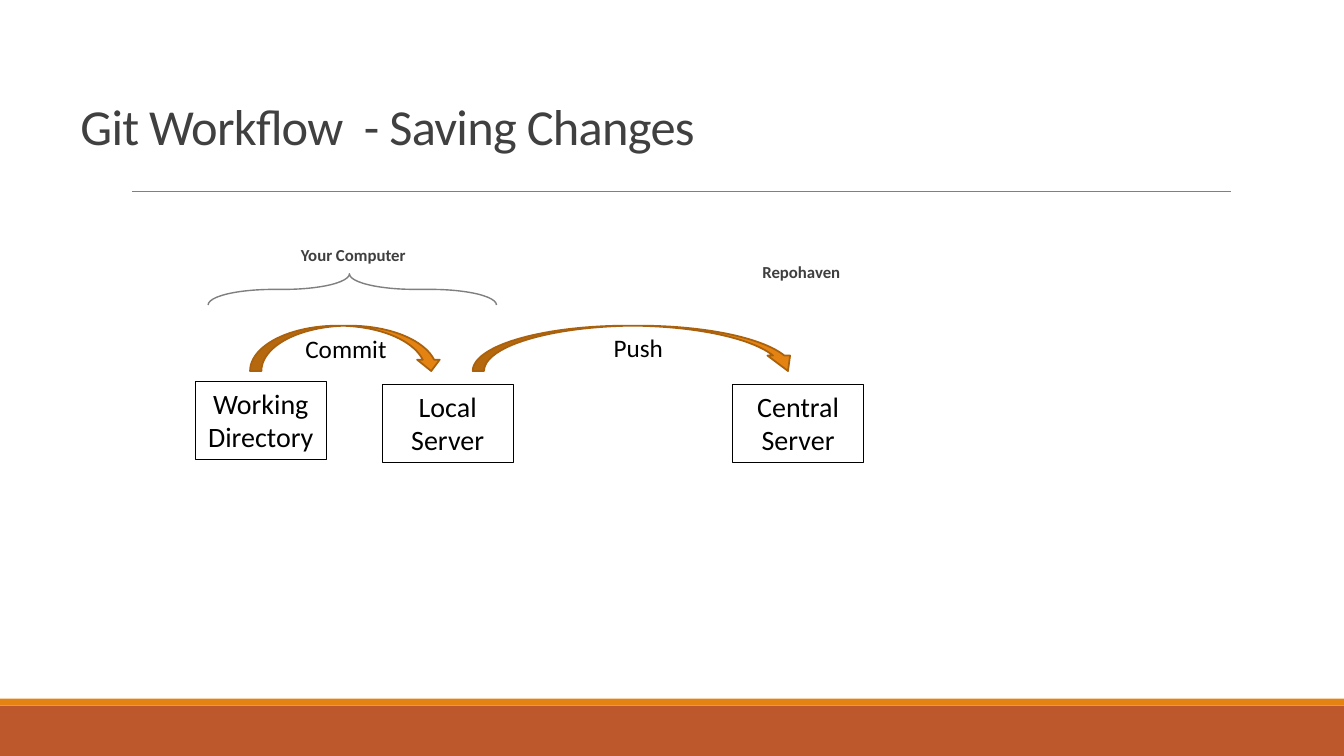
from pptx import Presentation
from pptx.dml.color import RGBColor
from pptx.enum.shapes import MSO_CONNECTOR, MSO_SHAPE
from pptx.enum.text import MSO_ANCHOR, PP_ALIGN
from pptx.oxml.ns import qn
from pptx.util import Pt
from lxml.etree import SubElement

BLACK = RGBColor(0x00, 0x00, 0x00)
TITLE_GRAY = RGBColor(0x40, 0x40, 0x40)
CAPTION_GRAY = RGBColor(0x3F, 0x3F, 0x3F)
BRACE_GRAY = RGBColor(0x7F, 0x7F, 0x7F)
RULE_GRAY = RGBColor(0x80, 0x80, 0x80)
ORANGE = RGBColor(0xE4, 0x83, 0x12)
DARK_ORANGE = RGBColor(0xA9, 0x61, 0x0D)
RUST = RGBColor(0xBD, 0x58, 0x2C)
FONT = "Calibri"


def write_text(shape, text, size, color=BLACK, bold=False, align=PP_ALIGN.LEFT,
               anchor=MSO_ANCHOR.TOP, wrap=True, inset=None, line_spacing=None, tracking=None):
    frame = shape.text_frame
    frame.word_wrap = wrap
    frame.vertical_anchor = anchor
    if inset is not None:
        frame.margin_left = frame.margin_right = Pt(inset)
        frame.margin_top = frame.margin_bottom = Pt(inset)
    paragraph = frame.paragraphs[0]
    paragraph.alignment = align
    if line_spacing is not None:
        paragraph.line_spacing = line_spacing
    run = paragraph.add_run()
    run.text = text
    run.font.name = FONT
    run.font.size = Pt(size)
    run.font.bold = bold
    run.font.color.rgb = color
    if tracking is not None:
        run.font._element.set("spc", str(round(tracking * 100)))


class WorkflowSlide:
    def __init__(self, presentation):
        self.slide = presentation.slides.add_slide(presentation.slide_layouts[6])
        self.shapes = self.slide.shapes

    def shape(self, kind, left, top, width, height, fill=None, line=None, line_width=1,
              adjustments=(), rotation=0):
        shape = self.shapes.add_shape(kind, Pt(left), Pt(top), Pt(width), Pt(height))
        shape.shadow.inherit = False
        shape.rotation = rotation
        for index, value in enumerate(adjustments):
            shape.adjustments[index] = value
        if fill is None:
            shape.fill.background()
        else:
            shape.fill.solid()
            shape.fill.fore_color.rgb = fill
        if line is None:
            shape.line.fill.background()
        else:
            shape.line.color.rgb = line
            shape.line.width = Pt(line_width)
        return shape

    def rule(self, left, right, top):
        connector = self.shapes.add_connector(
            MSO_CONNECTOR.STRAIGHT, Pt(left), Pt(top), Pt(right), Pt(top))
        connector.line.color.rgb = RULE_GRAY
        connector.line.width = Pt(0.5)
        SubElement(connector._element.spPr, qn("a:effectLst"))

    def text(self, text, left, top, width, height, **text_format):
        box = self.shapes.add_textbox(Pt(left), Pt(top), Pt(width), Pt(height))
        write_text(box, text, **text_format)

    def stage(self, text, left, top):
        box = self.shape(MSO_SHAPE.RECTANGLE, left, top, 93.6, 55.7, line=BLACK, line_width=0.75)
        write_text(box, text, 20, align=PP_ALIGN.CENTER)

    def step(self, text, left, width, text_left, text_top, text_width, adjustments=()):
        self.shape(MSO_SHAPE.CURVED_DOWN_ARROW, left, 232.6, width, 32.4, fill=ORANGE,
                   line=DARK_ORANGE, line_width=1.25, adjustments=adjustments)
        self.text(text, text_left, text_top, text_width, 29, size=18, wrap=False)


def main():
    presentation = Presentation()
    presentation.slide_width = Pt(960)
    presentation.slide_height = Pt(540)
    workflow = WorkflowSlide(presentation)

    workflow.shape(MSO_SHAPE.RECTANGLE, 0, 504, 960, 36, fill=RUST)
    workflow.shape(MSO_SHAPE.RECTANGLE, 0, 499, 960, 5, fill=ORANGE)
    workflow.rule(94.3, 879, 136.6)
    workflow.text("Git Workflow  - Saving Changes", 50.4, 25.2, 859, 89.3, size=36,
                  color=TITLE_GRAY, anchor=MSO_ANCHOR.BOTTOM, line_spacing=0.85, tracking=-0.5)

    caption = {"size": 12, "color": CAPTION_GRAY, "bold": True, "align": PP_ALIGN.CENTER}
    workflow.text("Repohaven", 523.4, 171.4, 98, 46, anchor=MSO_ANCHOR.MIDDLE, inset=3, **caption)
    workflow.text("Your Computer", 78.5, 160.6, 347.8, 28.8, anchor=MSO_ANCHOR.BOTTOM,
                  inset=0, **caption)
    workflow.shape(MSO_SHAPE.RIGHT_BRACE, 240.5, 103.7, 22.3, 206, line=BRACE_GRAY,
                   adjustments=(2.1, 0.49), rotation=270)

    for name, left, top in (("Working Directory", 139.5, 272.2),
                            ("Local Server", 273, 274.4),
                            ("Central Server", 523.3, 274.4)):
        workflow.stage(name, left, top)

    workflow.step("Commit", 178.6, 137.5, 211, 234.7, 73.4)
    workflow.step("Push", 337.7, 233.3, 431.3, 234, 50.4, adjustments=(0.25, 0.5, 0.34))

    presentation.save("out.pptx")


if __name__ == "__main__":
    main()
